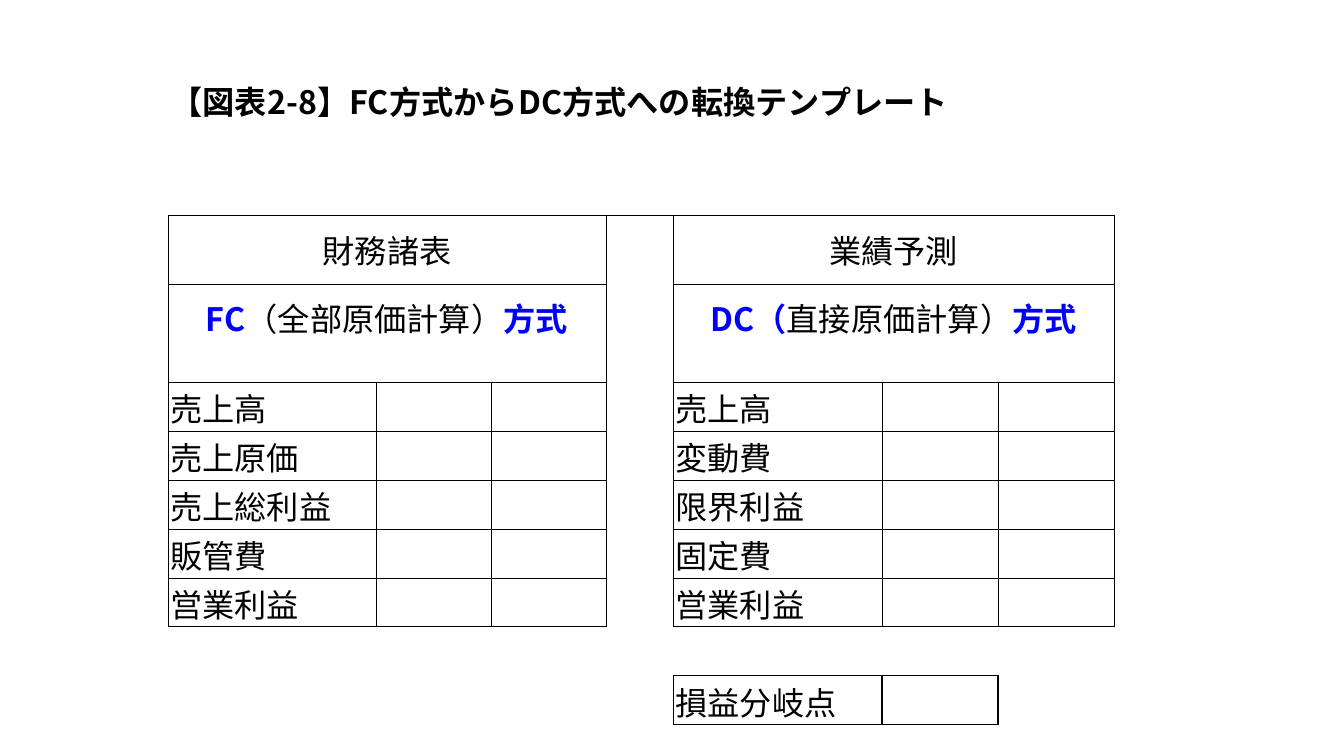
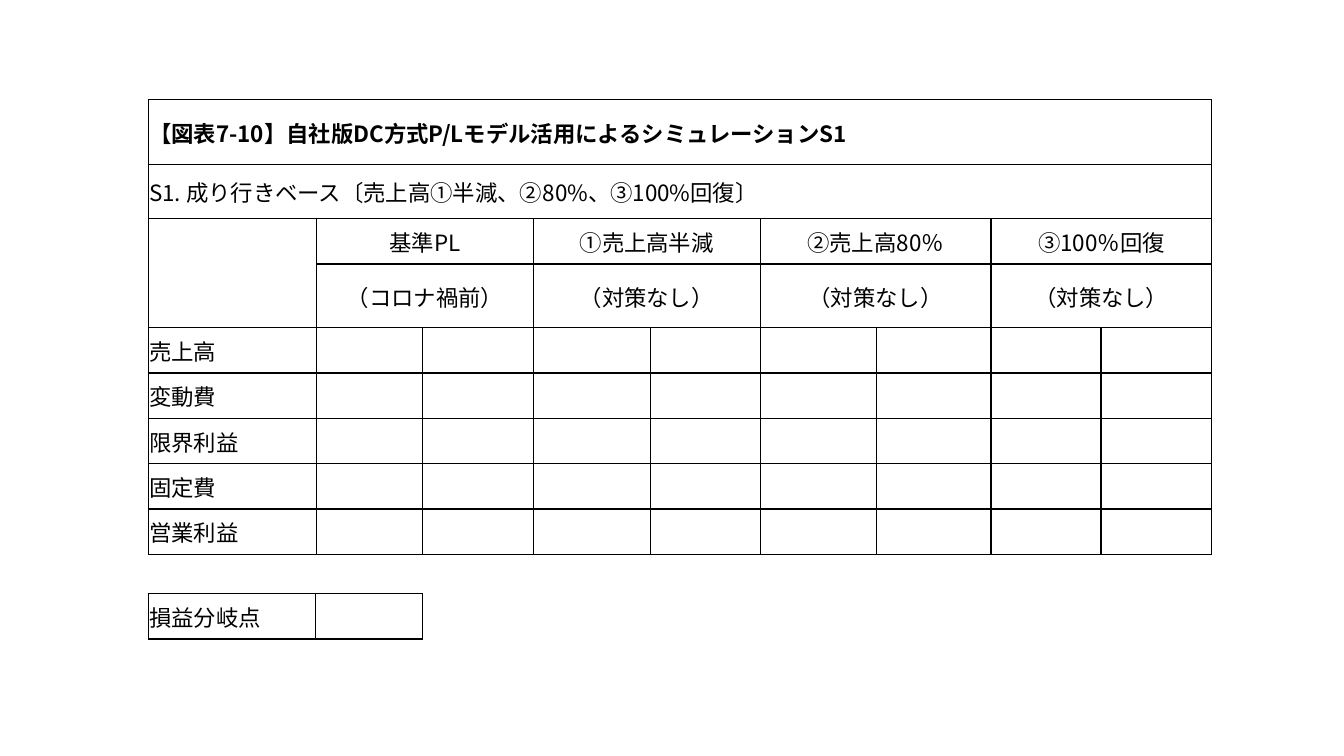
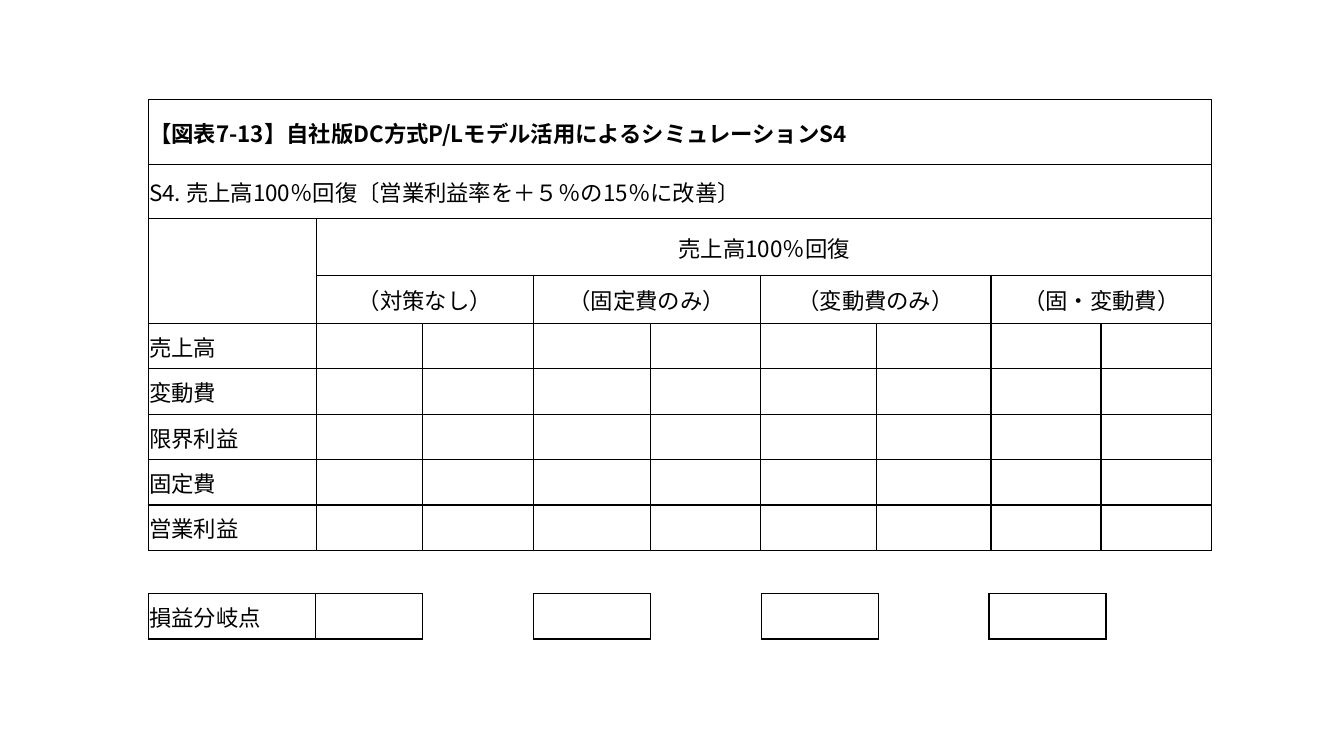
from dataclasses import dataclass

from lxml.etree import SubElement
from pptx import Presentation
from pptx.dml.color import RGBColor
from pptx.enum.text import MSO_ANCHOR as Anchor, PP_ALIGN as Align
from pptx.oxml import parse_xml
from pptx.oxml.ns import nsdecls, qn
from pptx.util import Inches, Pt


@dataclass(frozen=True)
class Theme:
    font: str = "Noto Sans CJK JP"
    ink: str = "000000"
    accent: str = "0000FF"
    large: float = 23
    normal: float = 16
    hairline: float = 0.5
    line: float = 1


@dataclass(frozen=True)
class CellStyle:
    align: Align = Align.JUSTIFY
    anchor: Anchor = Anchor.MIDDLE
    side: float = 0.01
    top: float = 0.01
    bottom: float = 0
    bold: bool = False


# Cell styles
LABEL = CellStyle()
CENTRED = CellStyle(align=Align.CENTER)
TEXT = CellStyle(align=Align.LEFT)
HEADING = CellStyle(align=Align.LEFT, bold=True)
WIDE_LABEL = CellStyle(side=0.02, top=0.02)
WIDE_TITLE = CellStyle(Align.LEFT, Anchor.TOP, 0.02, 0.02, bold=True)
WIDE_HEAD = CellStyle(Align.CENTER, Anchor.TOP, 0.21, 0.1, 0.1)

# Statement lines and the columns of the simulation tables
DC_LINES = ["売上高", "変動費", "限界利益", "固定費", "営業利益"]
FC_LINES = ["売上高", "売上原価", "売上総利益", "販管費", "営業利益"]
BREAK_EVEN = "損益分岐点"
SIMULATION_COLUMNS = [1.67, 1.05, 1.1, 1.16, 1.09, 1.15, 1.14, 1.09, 1.1]
SIDES = {"lnL": (0, -1), "lnR": (0, 1), "lnT": (-1, 0), "lnB": (1, 0)}


class Builder:
    def __init__(self, theme):
        self.theme = theme
        self.deck = Presentation()
        self.deck.slide_width, self.deck.slide_height = Inches(13.33), Inches(7.5)
        self.page = None

    def new_page(self):
        self.page = self.deck.slides.add_slide(self.deck.slide_layouts[6])

    def grid(self, left, top, columns, rows, frames=None):
        """Add a table; frames lists (first row, first column, rows, columns, line width)."""
        frame = self.page.shapes.add_table(
            len(rows), len(columns), Inches(left), Inches(top),
            Inches(sum(columns)), Inches(sum(rows)))
        table = frame.table
        table.first_row = table.horz_banding = False
        for column, width in zip(table.columns, columns):
            column.width = Inches(width)
        for row, height in zip(table.rows, rows):
            row.height = Inches(height)
        frames = frames or [(0, 0, len(rows), len(columns), self.theme.line)]
        widths = {(r, c): width
                  for row, column, height, span, width in frames
                  for r in range(row, row + height)
                  for c in range(column, column + span)}
        for r in range(len(rows)):
            for c in range(len(columns)):
                cell = table.cell(r, c)
                cell.fill.background()
                self.inset(cell, LABEL)
                self.borders(cell, r, c, widths)
        return table

    def borders(self, cell, row, column, widths):
        """Draw each side that belongs to this cell or to its neighbour."""
        properties = cell._tc.get_or_add_tcPr()
        for place, (side, (down, right)) in enumerate(SIDES.items()):
            width = max(widths.get((row, column), 0),
                        widths.get((row + down, column + right), 0))
            paint = (f'<a:solidFill><a:srgbClr val="{self.theme.ink}"/></a:solidFill>'
                     if width else "<a:noFill/>")
            properties.insert(place, parse_xml(
                f'<a:{side} {nsdecls("a")} w="{Pt(width)}">{paint}</a:{side}>'))

    def inset(self, cell, style):
        cell.margin_left = cell.margin_right = Inches(style.side)
        cell.margin_top, cell.margin_bottom = Inches(style.top), Inches(style.bottom)
        cell.vertical_anchor = style.anchor

    def put(self, table, row, column, text, style, size=None, height=1, width=1):
        """Fill a cell; text is a string or a list of (string, is accent)."""
        cell = table.cell(row, column)
        if height * width > 1:
            cell.merge(table.cell(row + height - 1, column + width - 1))
        self.inset(cell, style)
        para = cell.text_frame.paragraphs[0]
        para.alignment = style.align
        parts = [(text, False)] if isinstance(text, str) else text
        for words, is_accent in parts:
            span = para.add_run()
            span.text = words
            font = span.font
            font.size = Pt(size or self.theme.normal)
            font.bold = style.bold or is_accent
            font.color.rgb = RGBColor.from_string(
                self.theme.accent if is_accent else self.theme.ink)
            font.name = self.theme.font
            SubElement(span._r.get_or_add_rPr(), qn("a:ea"), typeface=self.theme.font)

    def labels(self, table, row, column, lines, style=LABEL, size=None):
        for offset, line in enumerate(lines):
            self.put(table, row + offset, column, line, style, size)

    def conversion(self, title, statements):
        """Two statements side by side, with a break-even box below the second."""
        self.new_page()
        size, thin = self.theme.large, self.theme.hairline
        columns = [0.97, 2.06, 1.14, 1.14, 0.67, 2.07, 1.15, 1.15, 0.6, 0.97]
        rows = [1.4, 0.68] + [4.37 / 9] * 9 + [0.26]
        table = self.grid(0.7, 0.74, columns, rows, [
            (1, 1, 8, 3, thin), (1, 5, 8, 3, thin), (10, 5, 1, 2, self.theme.line)])
        self.put(table, 0, 1, title, WIDE_TITLE, size, width=7)
        for column, (name, method, lines) in zip((1, 5), statements):
            self.put(table, 1, column, name, WIDE_HEAD, size, width=3)
            self.put(table, 2, column, method, WIDE_HEAD, size, height=2, width=3)
            self.labels(table, 4, column, lines, WIDE_LABEL, size)
        self.put(table, 10, 5, BREAK_EVEN, WIDE_LABEL, size)

    def simulation(self, title, subtitle, headings, heading_heights):
        """A profit model with four cases, and the break-even box below it."""
        self.new_page()
        rows = [0.64, 0.54] + heading_heights + [0.45] * len(DC_LINES)
        table = self.grid(1.47, 0.99, SIMULATION_COLUMNS, rows)
        self.put(table, 0, 0, title, HEADING, width=9)
        self.put(table, 1, 0, subtitle, TEXT, width=9)
        table.cell(2, 0).merge(table.cell(3, 0))
        for row, names in enumerate(headings, 2):
            width = 8 // len(names)
            for place, name in enumerate(names):
                self.put(table, row, 1 + place * width, name, CENTRED, width=width)
        self.labels(table, 4, 0, DC_LINES)
        box = self.grid(1.47, 5.89, [1.66, 1.06], [0.45])
        self.put(box, 0, 0, BREAK_EVEN, LABEL)


def main():
    builder = Builder(Theme())

    # Slide 1: conversion template
    builder.conversion("【図表2-8】FC方式からDC方式への転換テンプレート", [
        ("財務諸表",
         [("FC", True), ("（全部原価計算）", False), ("方式", True)], FC_LINES),
        ("業績予測",
         [("DC（", True), ("直接原価計算）", False), ("方式", True)], DC_LINES),
    ])

    # Slide 2: simulation S1
    builder.simulation(
        "【図表7-10】自社版DC方式P/Lモデル活用によるシミュレーションS1",
        "S1. 成り行きベース〔売上高①半減、②80%、③100%回復〕",
        [["基準PL", "①売上高半減", "②売上高80％", "③100％回復"],
         ["（コロナ禍前）"] + ["（対策なし）"] * 3],
        [0.45, 0.63])

    # Slide 3: simulation S4, with a break-even box for each further case
    builder.simulation(
        "【図表7-13】自社版DC方式P/Lモデル活用によるシミュレーションS4",
        "S4. 売上高100％回復〔営業利益率を＋５％の15％に改善〕",
        [["売上高100％回復"],
         ["（対策なし）", "（固定費のみ）", "（変動費のみ）", "（固・変動費）"]],
        [0.56, 0.48])
    for case in range(3):
        builder.grid(5.29 + 2.26 * case, 5.89, [1.16], [0.45])

    builder.deck.save("out.pptx")


if __name__ == "__main__":
    main()
